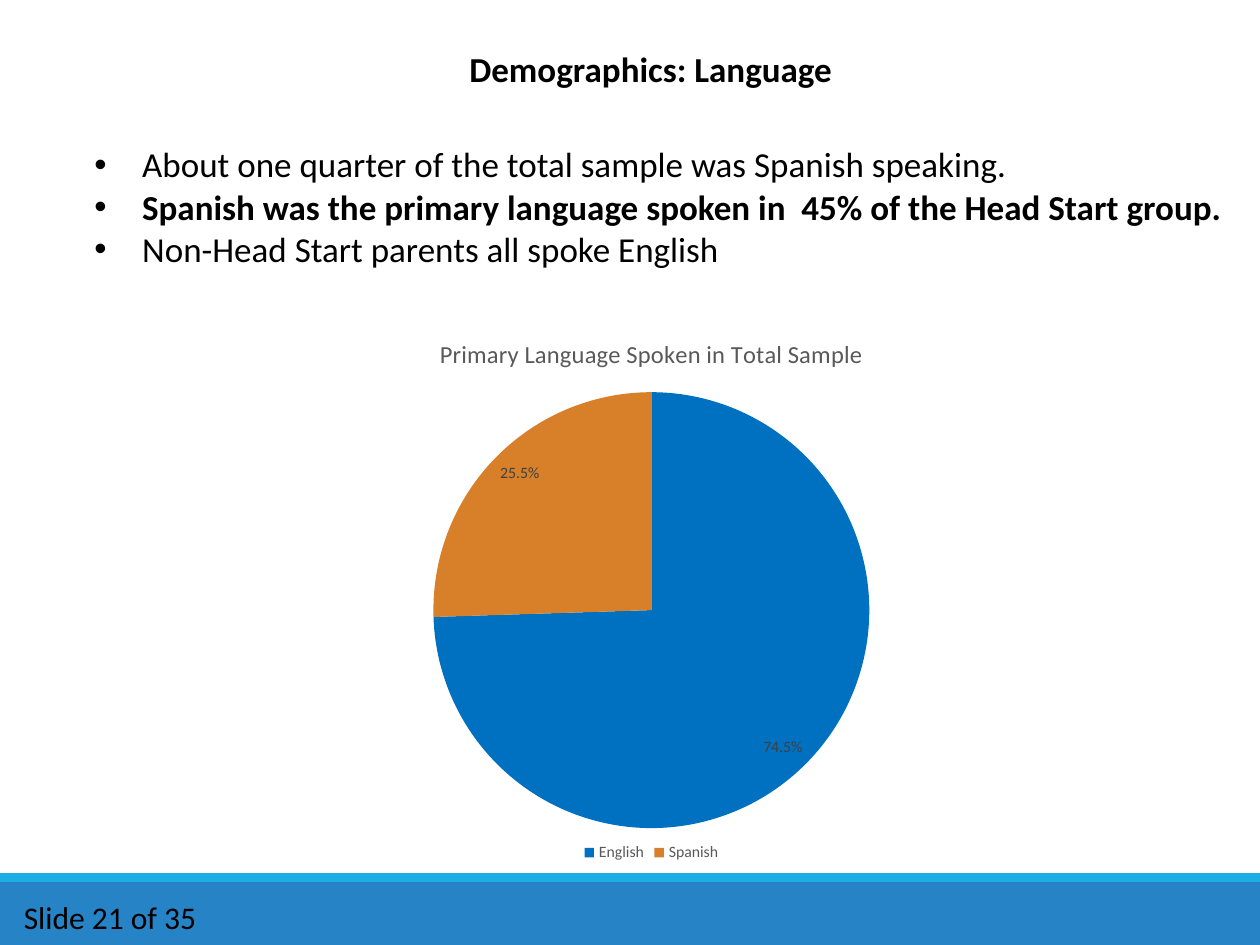
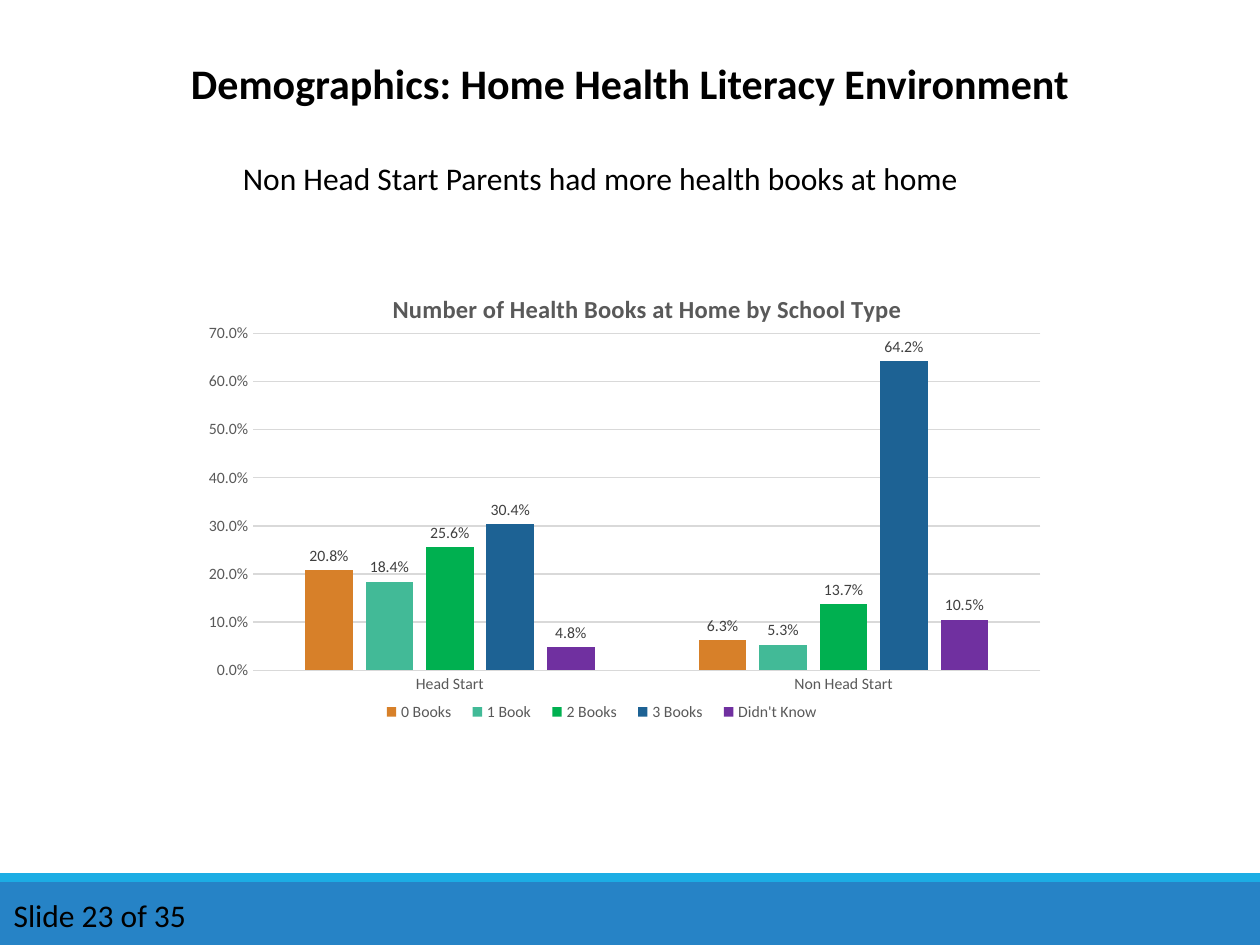
"""Builds two demographics slides, each with a chart above a shared footer band."""
from lxml import etree
from pptx import Presentation
from pptx.chart.data import CategoryChartData
from pptx.dml.color import RGBColor
from pptx.enum.chart import XL_CHART_TYPE as ChartType
from pptx.enum.chart import XL_LABEL_POSITION as LabelPosition
from pptx.enum.chart import XL_LEGEND_POSITION as LegendPosition
from pptx.enum.chart import XL_TICK_MARK as TickMark
from pptx.enum.shapes import MSO_SHAPE as Shape
from pptx.enum.text import MSO_ANCHOR as Anchor
from pptx.enum.text import PP_ALIGN as Align
from pptx.oxml.ns import qn
from pptx.util import Inches, Pt

FONT = "Calibri"
PERCENT = "0.0%"
BLACK = RGBColor(0x00, 0x00, 0x00)
CHART_GREY = RGBColor(0x59, 0x59, 0x59)
LABEL_GREY = RGBColor(0x40, 0x40, 0x40)
GRID_GREY = RGBColor(0xD9, 0xD9, 0xD9)
BAND_BLUE = RGBColor(0x26, 0x83, 0xC6)
STRIPE_BLUE = RGBColor(0x1C, 0xAD, 0xE4)
ENGLISH_BLUE = RGBColor(0x00, 0x70, 0xC0)
ORANGE = RGBColor(0xD7, 0x80, 0x29)
TEAL = RGBColor(0x42, 0xBA, 0x97)
GREEN = RGBColor(0x00, 0xB0, 0x50)
NAVY = RGBColor(0x1D, 0x62, 0x94)
PURPLE = RGBColor(0x70, 0x30, 0xA0)

FOOTER_BANDS = [((0, 7, 10, 0.5), BAND_BLUE), ((0, 6.93, 10, 0.07), STRIPE_BLUE)]

LANGUAGE_POINTS = [
    ("About one quarter of the total sample was Spanish speaking.", False),
    ("Spanish was the primary language spoken in  45% of the Head Start group.", True),
    ("Non-Head Start parents all spoke English", False),
]
LANGUAGES = ["English", "Spanish"]
LANGUAGE_SHARES = [("Series 1", (0.745, 0.255))]
LANGUAGE_COLORS = [ENGLISH_BLUE, ORANGE]

SCHOOL_TYPES = ["Head Start", "Non Head Start"]
BOOK_SHARES = [
    ("0 Books", (0.208, 0.063)),
    ("1 Book", (0.184, 0.053)),
    ("2 Books", (0.256, 0.137)),
    ("3 Books", (0.304, 0.642)),
    ("Didn't Know", (0.048, 0.105)),
]
BOOK_COLORS = [ORANGE, TEAL, GREEN, NAVY, PURPLE]


def set_font(font, size, color, bold=False):
    font.name = FONT
    font.size = Pt(size)
    font.bold = bold
    font.color.rgb = color


def add_text(slide, box, lines, size, align=Align.LEFT, bullets=False):
    frame = slide.shapes.add_textbox(*map(Inches, box)).text_frame
    frame.word_wrap = True
    frame.vertical_anchor = Anchor.MIDDLE if bullets else Anchor.TOP
    frame.text = "\n".join(text for text, _ in lines)
    for paragraph, (_, bold) in zip(frame.paragraphs, lines):
        paragraph.alignment = align
        if bullets:
            properties = paragraph._p.get_or_add_pPr()
            properties.set("marL", str(Inches(0.38)))
            properties.set("indent", str(-Inches(0.38)))
            etree.SubElement(properties, qn("a:buFont"), typeface="Arial")
            etree.SubElement(properties, qn("a:buChar"), char="•")
        for run in paragraph.runs:
            set_font(run.font, size, BLACK, bold)


def add_base_slide(presentation, title, title_box, title_size, footer, footer_box):
    slide = presentation.slides.add_slide(presentation.slide_layouts[6])
    for box, color in FOOTER_BANDS:
        band = slide.shapes.add_shape(Shape.RECTANGLE, *map(Inches, box))
        band.shadow.inherit = False
        band.fill.solid()
        band.fill.fore_color.rgb = color
        band.line.fill.background()
    add_text(slide, title_box, [(title, True)], title_size, Align.CENTER)
    add_text(slide, footer_box, [(footer, False)], 18)
    return slide


def set_layout(part, position, layout, target=()):
    for old_layout in part.findall(qn("c:layout")):
        part.remove(old_layout)
    element = etree.Element(qn("c:layout"))
    manual = etree.SubElement(element, qn("c:manualLayout"))
    settings = [*target, ("xMode", "edge"), ("yMode", "edge"), *zip("xywh", layout)]
    for name, value in settings:
        etree.SubElement(manual, qn(f"c:{name}"), val=str(value))
    part.insert(position, element)


def add_percent_chart(slide, kind, box, title, categories, series, layout, label_position, bold=False):
    data = CategoryChartData(number_format=PERCENT)
    data.categories = categories
    for name, values in series:
        data.add_series(name, values)
    chart = slide.shapes.add_chart(kind, *map(Inches, box), data).chart
    set_font(chart.font, 10, BLACK)
    chart.has_title = True
    title_frame = chart.chart_title.text_frame
    title_frame.text = title
    set_font(title_frame.paragraphs[0].runs[0].font, 14, CHART_GREY, bold)
    chart.chart_title.include_in_layout = False
    chart.has_legend = True
    chart.legend.position = LegendPosition.BOTTOM
    chart.legend.include_in_layout = False
    set_font(chart.legend.font, 9, CHART_GREY)
    plot = chart.plots[0]
    plot.has_data_labels = True
    labels = plot.data_labels
    labels.show_value = True
    labels.show_percentage = False
    labels.number_format = PERCENT
    labels.number_format_is_linked = False
    labels.position = label_position
    set_font(labels.font, 9, LABEL_GREY)
    set_layout(chart._chartSpace.chart.plotArea, 0, layout, [("layoutTarget", "inner")])
    return chart


def paint(items, colors):
    for item, color in zip(items, colors):
        item.format.fill.solid()
        item.format.fill.fore_color.rgb = color


def style_axes(chart):
    for axis in (chart.category_axis, chart.value_axis):
        axis.major_tick_mark = TickMark.NONE
        axis.minor_tick_mark = TickMark.NONE
        set_font(axis.tick_labels.font, 9, CHART_GREY)
    values = chart.value_axis
    values.minimum_scale, values.maximum_scale, values.major_unit = 0, 0.7, 0.1
    values.tick_labels.number_format = PERCENT
    values.tick_labels.number_format_is_linked = False
    values.format.line.fill.background()
    for line in (chart.category_axis.format.line, values.major_gridlines.format.line):
        line.color.rgb = GRID_GREY
        line.width = Pt(0.75)


def build_language_slide(presentation):
    slide = add_base_slide(presentation, "Demographics: Language", (0.83, 0.33, 8.67, 0.44), 20,
                           "Slide 21 of 35", (0.09, 7.08, 1.89, 0.4))
    add_text(slide, (0.65, 1.08, 9.35, 1.11), LANGUAGE_POINTS, 20, bullets=True)
    chart = add_percent_chart(slide, ChartType.PIE, (1.5, 2.5, 7.34, 4.38),
                              "Primary Language Spoken in Total Sample", LANGUAGES, LANGUAGE_SHARES,
                              (0.26, 0.14, 0.48, 0.79), LabelPosition.INSIDE_END)
    plot = chart.plots[0]
    plot.vary_by_categories = True
    points = plot.series[0].points
    paint([points[index] for index in range(len(LANGUAGES))], LANGUAGE_COLORS)


def build_books_slide(presentation):
    slide = add_base_slide(presentation, "Demographics: Home Health Literacy Environment",
                           (0.54, 0.41, 8.92, 0.5), 24, "Slide 23 of 35", (0.01, 7.06, 1.66, 0.4))
    add_text(slide, (1.83, 1.21, 6.67, 0.42),
             [("Non Head Start Parents had more health books at home", False)], 18)
    chart = add_percent_chart(slide, ChartType.COLUMN_CLUSTERED, (1.42, 2.05, 6.92, 3.83),
                              "Number of Health Books at Home by School Type", SCHOOL_TYPES, BOOK_SHARES,
                              (0.085, 0.156, 0.903, 0.698), LabelPosition.OUTSIDE_END, bold=True)
    set_layout(chart.chart_title._element, 1, (0.24, 0.06))
    set_layout(chart.legend._element, 1, (0.22, 0.91, 0.53, 0.06))
    plot = chart.plots[0]
    plot.vary_by_categories = False
    plot.gap_width = 219
    plot.overlap = -27
    paint(plot.series, BOOK_COLORS)
    style_axes(chart)


def main():
    presentation = Presentation()
    presentation.slide_width = Inches(10)
    presentation.slide_height = Inches(7.5)
    build_language_slide(presentation)
    build_books_slide(presentation)
    presentation.save("out.pptx")


if __name__ == "__main__":
    main()
